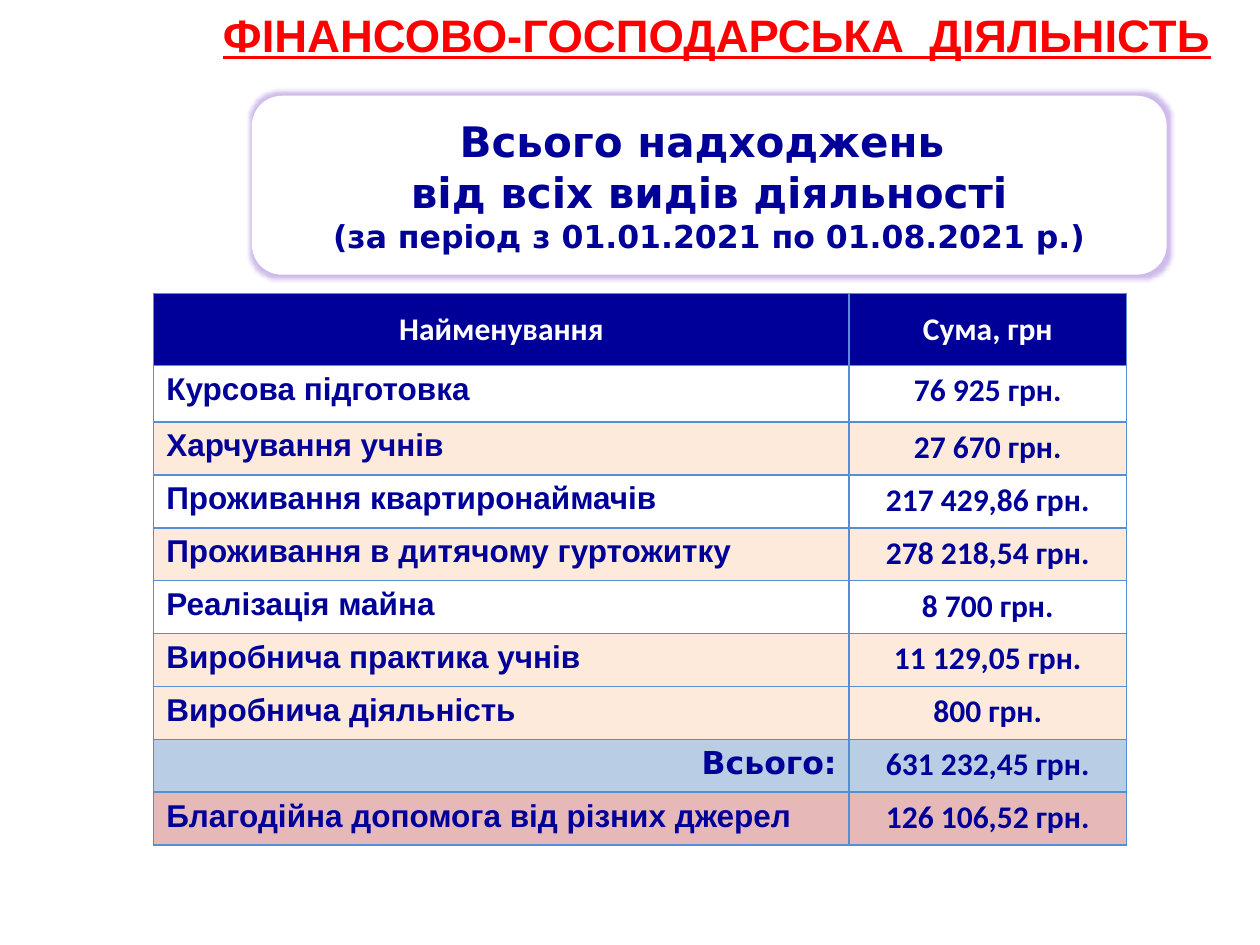
from lxml import etree
from pptx import Presentation
from pptx.dml.color import RGBColor
from pptx.enum import shapes, text
from pptx.oxml import ns
from pptx.util import Inches, Pt

NAVY, WHITE, PEACH, RED = "000099", "FFFFFF", "FDEADA", "FF0000"
EDGE, GLOW = "558ED5", "8855CC"
LEFT, MID, RIGHT = text.PP_ALIGN.LEFT, text.PP_ALIGN.CENTER, text.PP_ALIGN.RIGHT
ROWS = [
    ("Курсова підготовка", "76 925 грн.", WHITE),
    ("Харчування учнів", "27 670 грн.", PEACH),
    ("Проживання квартиронаймачів", "217 429,86 грн.", WHITE),
    ("Проживання в дитячому гуртожитку", "278 218,54 грн.", PEACH),
    ("Реалізація майна", "8 700 грн.", WHITE),
    ("Виробнича практика учнів", "11 129,05 грн.", PEACH),
    ("Виробнича діяльність", "800 грн.", PEACH),
    ("Всього:", "631 232,45 грн.", "B9CDE5"),
    ("Благодійна допомога від різних джерел", "126 106,52 грн.", "E6B9B8"),
]


def paint(fill, color):
    """Fill with a solid hex colour."""
    fill.solid()
    fill.fore_color.rgb = RGBColor.from_string(color)


def style(para, face, size, color, align=MID):
    """Set the alignment and bold font of a paragraph."""
    para.alignment = align
    font = para.font
    font.name, font.size, font.bold = face, Pt(size), True
    font.color.rgb = RGBColor.from_string(color)


def add(parent, tag, **attrs):
    """Append a drawing element to its parent."""
    return etree.SubElement(parent, ns.qn("a:" + tag), attrs)


def panel(slide, kind, box):
    """Add a plain white shape with centred text."""
    shape = slide.shapes.add_shape(kind, *map(Inches, box))
    shape.shadow.inherit = False
    paint(shape.fill, WHITE)
    shape.line.fill.background()
    shape.text_frame.word_wrap = True
    shape.text_frame.vertical_anchor = text.MSO_ANCHOR.MIDDLE
    return shape


def title(slide, box):
    """Place the underlined heading."""
    shape = panel(slide, shapes.MSO_SHAPE.SNIP_2_DIAG_RECTANGLE, box)
    shape.adjustments[0], shape.adjustments[1] = 0.11, 0
    para = shape.text_frame.paragraphs[0]
    para.text = "ФІНАНСОВО-ГОСПОДАРСЬКА  ДІЯЛЬНІСТЬ"
    para.line_spacing = 0.9
    style(para, "Arial", 26, RED)
    para.font.underline = True


def banner(slide, box):
    """Place the glowing box with the subject and period."""
    shape = panel(slide, shapes.MSO_SHAPE.ROUNDED_RECTANGLE, box)
    effects = shape._element.spPr.find(ns.qn("a:effectLst"))
    glow = add(effects, "glow", rad=str(Pt(5)))
    add(add(glow, "srgbClr", val=GLOW), "alpha", val="40000")
    frame = shape.text_frame
    frame.text = "Всього надходжень \vвід всіх видів діяльності"
    style(frame.paragraphs[0], "DejaVu Sans", 24, NAVY)
    para = frame.add_paragraph()
    para.text = "(за період з 01.01.2021 по 01.08.2021 р.)"
    style(para, "DejaVu Sans", 18, NAVY)


def put(cell, words, fill, face, color=NAVY, align=MID):
    """Fill one table cell and draw its borders."""
    props = cell._tc.get_or_add_tcPr()
    for side in ("lnL", "lnR", "lnT", "lnB"):
        line = add(props, side, w=str(Pt(1)))
        add(add(line, "solidFill"), "srgbClr", val=EDGE)
    paint(cell.fill, fill)
    cell.text = words
    style(cell.text_frame.paragraphs[0], face, 18, color, align)


def table(slide, box):
    """Place the income table."""
    grid = slide.shapes.add_table(len(ROWS) + 1, 2, *map(Inches, box)).table
    for col, width in zip(grid.columns, (5.52, 2.2)):
        col.width = Inches(width)
    for row, height in zip(grid.rows, [0.57, 0.45] + [0.42] * 8):
        row.height = Inches(height)
    for col, words in enumerate(("Найменування", "Сума, грн")):
        cell = grid.cell(0, col)
        put(cell, words, NAVY, "Calibri", WHITE)
        cell.vertical_anchor = text.MSO_ANCHOR.MIDDLE
    for row, (name, sum_, fill) in enumerate(ROWS, 1):
        total = name == "Всього:"
        face, align = ("DejaVu Sans", RIGHT) if total else ("Arial", LEFT)
        put(grid.cell(row, 0), name, fill, face, align=align)
        put(grid.cell(row, 1), sum_, fill, "Calibri")


def main():
    """Build and save the slide."""
    deck = Presentation()
    deck.slide_width, deck.slide_height = Inches(10), Inches(7.5)
    slide = deck.slides.add_slide(deck.slide_layouts[6])
    table(slide, (1.22, 2.33, 7.72, 4.4))
    banner(slide, (2, 0.76, 7.26, 1.42))
    title(slide, (1.38, 0, 8.62, 0.6))
    deck.save("out.pptx")


if __name__ == "__main__":
    main()
